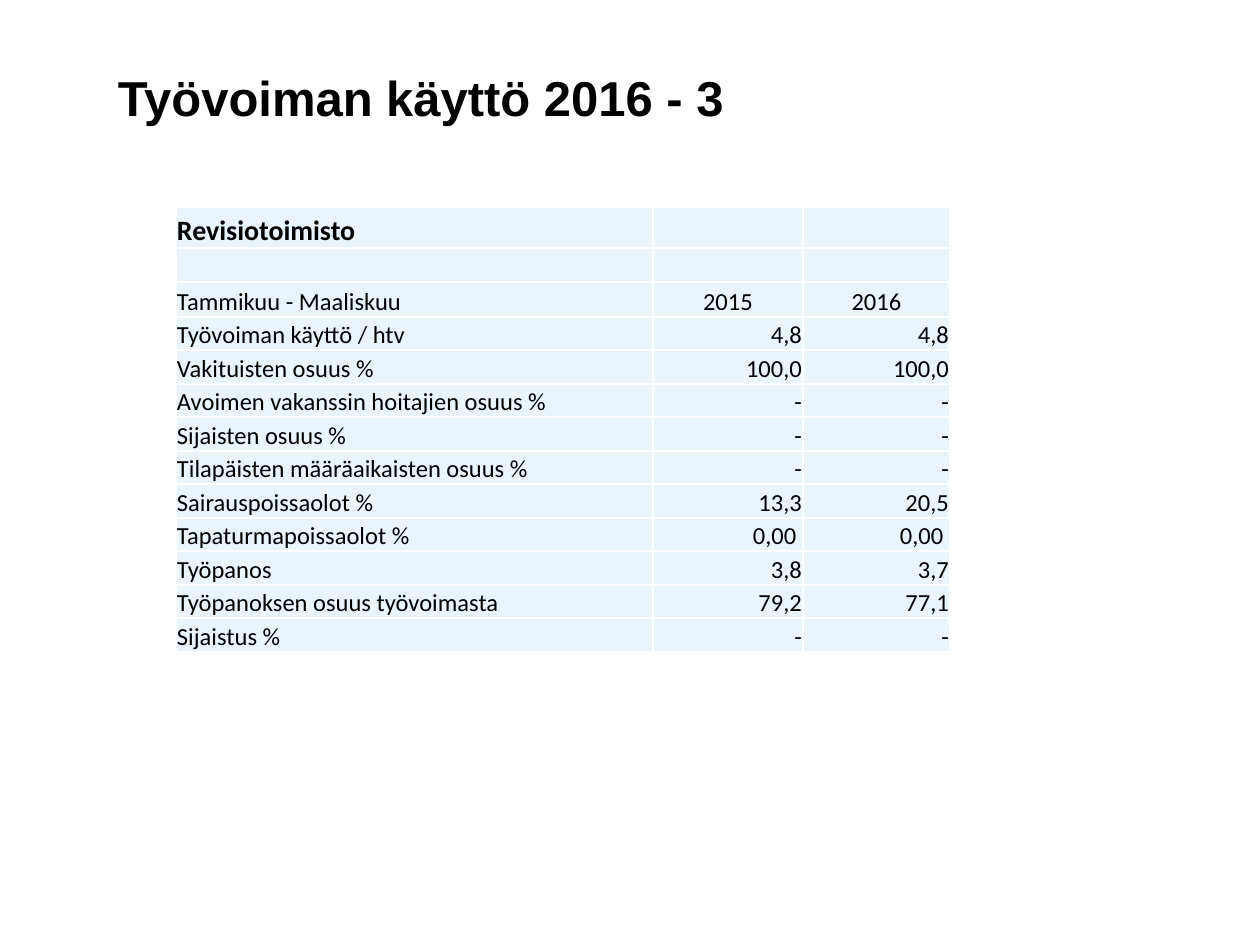
from dataclasses import dataclass

from lxml.etree import SubElement
from pptx import Presentation
from pptx.dml.color import RGBColor
from pptx.enum.text import MSO_ANCHOR, PP_ALIGN
from pptx.oxml.ns import qn
from pptx.util import Pt

PX = 914400 // 126


@dataclass(frozen=True)
class Theme:
    ink: str = "000000"
    cell: str = "E9F4FB"
    border: str = "FFFFFF"
    title_font: str = "Arial"
    table_font: str = "Calibri"
    title: int = 28
    heading: int = 16
    body: int = 14


T = Theme()

ROWS = [
    ("Revisiotoimisto", "", ""),
    ("", "", ""),
    ("Tammikuu - Maaliskuu", "2015", "2016"),
    ("Työvoiman käyttö / htv", "4,8", "4,8"),
    ("Vakituisten osuus %", "100,0", "100,0"),
    ("Avoimen vakanssin hoitajien osuus %", "-", "-"),
    ("Sijaisten osuus %", "-", "-"),
    ("Tilapäisten määräaikaisten osuus %", "-", "-"),
    ("Sairauspoissaolot %", "13,3", "20,5"),
    ("Tapaturmapoissaolot %", "0,00 ", "0,00 "),
    ("Työpanos", "3,8", "3,7"),
    ("Työpanoksen osuus työvoimasta", "79,2", "77,1"),
    ("Sijaistus %", "-", "-"),
]
YEAR_ROW = 2
COL_WIDTHS = [477, 150, 147]
ROW_HEIGHTS = [41, 34, 35] + [33, 34] * 5


def add_run(p, text, font, size, bold):
    r = p.add_run()
    r.text = text
    r.font.name, r.font.size, r.font.bold = font, Pt(size), bold
    r.font.color.rgb = RGBColor.from_string(T.ink)


def style_cell(cell):
    """Set the fill, margins, anchor and thin borders of a table cell."""
    cell.margin_left = cell.margin_right = cell.margin_top = PX
    cell.margin_bottom = 0
    cell.vertical_anchor = MSO_ANCHOR.BOTTOM
    tcPr = cell._tc.get_or_add_tcPr()
    for side in ("a:lnL", "a:lnR", "a:lnT", "a:lnB"):
        ln = SubElement(tcPr, qn(side), w=str(Pt(1)))
        SubElement(SubElement(ln, qn("a:solidFill")), qn("a:srgbClr"), val=T.border)
    cell.fill.solid()
    cell.fill.fore_color.rgb = RGBColor.from_string(T.cell)


prs = Presentation()
prs.slide_width, prs.slide_height = 1260 * PX, 945 * PX
s = prs.slides.add_slide(prs.slide_layouts[6])

# Title
sp = s.shapes.add_textbox(118 * PX, 69 * PX, 1022 * PX, 137 * PX)
tf = sp.text_frame
tf.word_wrap = True
tf.margin_left = tf.margin_top = tf.margin_bottom = 0
p = tf.paragraphs[0]
p.line_spacing = Pt(33)
add_run(p, "Työvoiman käyttö 2016 - 3", T.title_font, T.title, True)

# Workforce table
table = s.shapes.add_table(len(ROWS), len(COL_WIDTHS), 176 * PX, 207 * PX,
                           sum(COL_WIDTHS) * PX, sum(ROW_HEIGHTS) * PX).table
table.first_row = table.horz_banding = False
for column, width in zip(table.columns, COL_WIDTHS):
    column.width = width * PX
for row, height in zip(table.rows, ROW_HEIGHTS):
    row.height = height * PX

for i, values in enumerate(ROWS):
    size = T.heading if i == 0 else T.body
    for j, value in enumerate(values):
        cell = table.cell(i, j)
        style_cell(cell)
        p = cell.text_frame.paragraphs[0]
        if j:
            p.alignment = PP_ALIGN.CENTER if i == YEAR_ROW else PP_ALIGN.RIGHT
        if value:
            add_run(p, value, T.table_font, size, i == 0)
        else:
            # Keeps an empty cell from stretching its row
            SubElement(p._p, qn("a:endParaRPr"), sz=str(size * 100))

prs.save("out.pptx")
